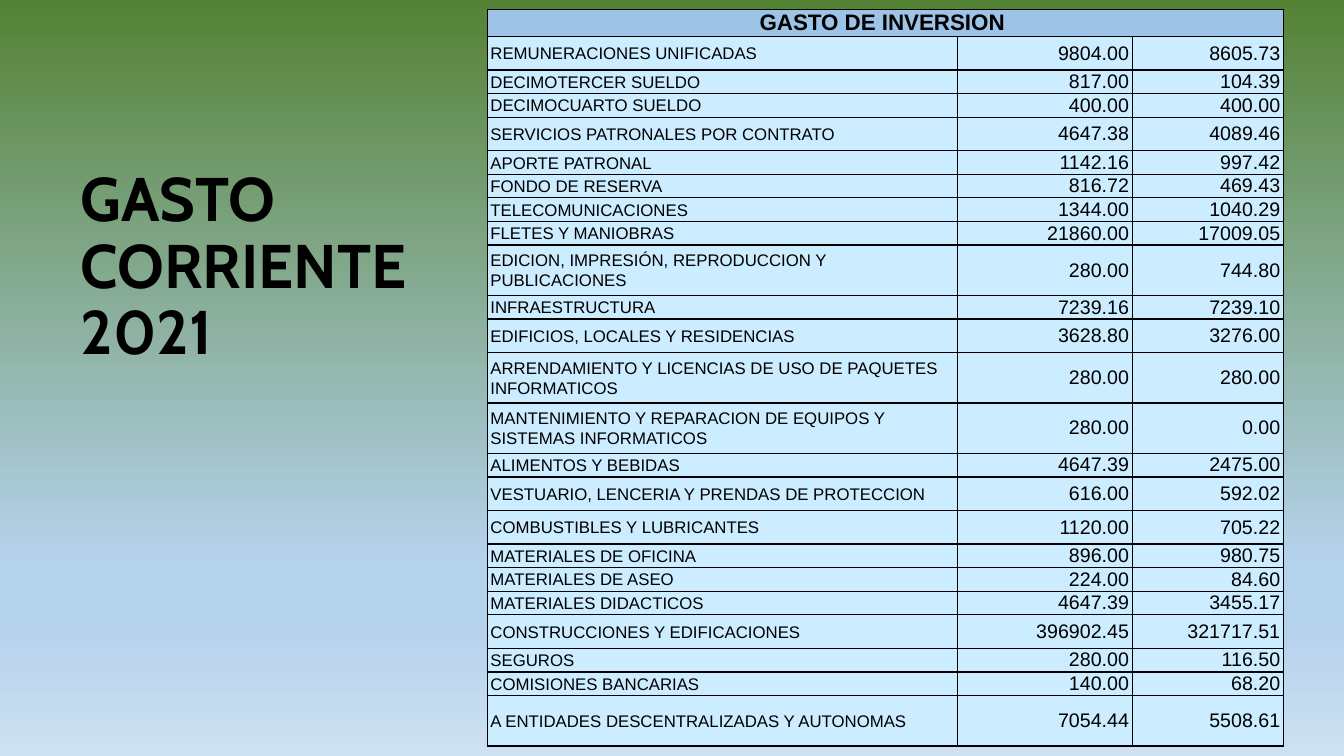
from lxml import etree
from pptx import Presentation
from pptx.dml.color import RGBColor
from pptx.enum import text
from pptx.oxml import ns
from pptx.util import Pt

BLACK = RGBColor(0x00, 0x00, 0x00)
HEADER_BLUE = RGBColor(0x9D, 0xC3, 0xE6)
CELL_BLUE = RGBColor(0xCC, 0xEC, 0xFF)
GREEN = RGBColor(0x54, 0x82, 0x35)
SKY = RGBColor(0xB5, 0xD2, 0xEC)
PALE_SKY = RGBColor(0xCE, 0xE1, 0xF2)
BACKGROUND_STOPS = [(0, GREEN), (74, SKY), (83, SKY), (100, PALE_SKY)]

COLUMN_WIDTHS = [336.2, 124.6, 108]
HEADER_HEIGHT, LOW, MEDIUM, HIGH = 18.8, 16.86, 24, 36
EXPENSES = [
    ("REMUNERACIONES UNIFICADAS", "9804.00", "8605.73", MEDIUM),
    ("DECIMOTERCER SUELDO", "817.00", "104.39", LOW),
    ("DECIMOCUARTO SUELDO", "400.00", "400.00", LOW),
    ("SERVICIOS PATRONALES POR CONTRATO", "4647.38", "4089.46", MEDIUM),
    ("APORTE PATRONAL", "1142.16", "997.42", LOW),
    ("FONDO DE RESERVA", "816.72", "469.43", LOW),
    ("TELECOMUNICACIONES", "1344.00", "1040.29", LOW),
    ("FLETES Y MANIOBRAS", "21860.00", "17009.05", LOW),
    ("EDICION, IMPRESIÓN, REPRODUCCION Y PUBLICACIONES", "280.00", "744.80", HIGH),
    ("INFRAESTRUCTURA", "7239.16", "7239.10", LOW),
    ("EDIFICIOS, LOCALES Y RESIDENCIAS", "3628.80", "3276.00", MEDIUM),
    ("ARRENDAMIENTO Y LICENCIAS DE USO DE PAQUETES INFORMATICOS", "280.00", "280.00", HIGH),
    ("MANTENIMIENTO Y REPARACION DE EQUIPOS Y SISTEMAS INFORMATICOS", "280.00", "0.00", HIGH),
    ("ALIMENTOS Y BEBIDAS", "4647.39", "2475.00", LOW),
    ("VESTUARIO, LENCERIA Y PRENDAS DE PROTECCION", "616.00", "592.02", MEDIUM),
    ("COMBUSTIBLES Y LUBRICANTES", "1120.00", "705.22", MEDIUM),
    ("MATERIALES DE OFICINA", "896.00", "980.75", LOW),
    ("MATERIALES DE ASEO", "224.00", "84.60", LOW),
    ("MATERIALES DIDACTICOS", "4647.39", "3455.17", LOW),
    ("CONSTRUCCIONES Y EDIFICACIONES", "396902.45", "321717.51", MEDIUM),
    ("SEGUROS", "280.00", "116.50", LOW),
    ("COMISIONES BANCARIAS", "140.00", "68.20", LOW),
    ("A ENTIDADES DESCENTRALIZADAS Y AUTONOMAS", "7054.44", "5508.61", HIGH),
]


def add_element(parent, tag, **attributes):
    return etree.SubElement(parent, ns.qn(tag), **attributes)


def paint_background(slide):
    slide.background.fill.gradient()
    gradient = slide.element.xpath(".//p:bgPr/a:gradFill")[0]
    for child in list(gradient):
        gradient.remove(child)
    stops = add_element(gradient, "a:gsLst")
    for percent, color in BACKGROUND_STOPS:
        stop = add_element(stops, "a:gs", pos=str(percent * 1000))
        add_element(stop, "a:srgbClr", val=str(color))
    add_element(gradient, "a:lin", ang="5400000", scaled="0")


def add_title(slide, left, top, width, height):
    shape = slide.shapes.add_textbox(Pt(left), Pt(top), Pt(width), Pt(height))
    frame = shape.text_frame
    frame.word_wrap = True
    frame.vertical_anchor = text.MSO_ANCHOR.MIDDLE
    frame.margin_left = frame.margin_right = Pt(7.2)
    frame.margin_top = frame.margin_bottom = Pt(7.2)
    paragraph = frame.paragraphs[0]
    paragraph.text = "GASTO CORRIENTE 2021"
    paragraph._p.get_or_add_pPr().set("marL", str(Pt(5)))
    paragraph.line_spacing = 0.9
    font = paragraph.font
    font.name, font.size, font.bold = "Cabin", Pt(44), True
    font.color.rgb = BLACK


def style_cell(cell, color):
    cell.margin_left = cell.margin_right = Pt(2.3)
    cell.margin_top = cell.margin_bottom = 0
    cell.vertical_anchor = text.MSO_ANCHOR.MIDDLE
    # Borders come before the fill in the cell properties
    properties = cell._tc.get_or_add_tcPr()
    for side in ("a:lnL", "a:lnR", "a:lnT", "a:lnB"):
        line = add_element(properties, side, w=str(Pt(1)))
        add_element(add_element(line, "a:solidFill"), "a:srgbClr", val=str(BLACK))
    cell.fill.solid()
    cell.fill.fore_color.rgb = color


def write_cell(cell, words, size, alignment, bold=False, line_spacing=1.0):
    paragraph = cell.text_frame.paragraphs[0]
    paragraph.text = words
    paragraph.alignment = alignment
    paragraph.line_spacing = line_spacing
    font = paragraph.font
    font.name, font.size, font.bold = "Arial", Pt(size), bold
    font.color.rgb = BLACK


def add_expense_table(slide, left, top):
    heights = [HEADER_HEIGHT] + [expense[-1] for expense in EXPENSES]
    table = slide.shapes.add_table(
        len(heights), len(COLUMN_WIDTHS), Pt(left), Pt(top),
        Pt(sum(COLUMN_WIDTHS)), Pt(sum(heights))).table
    table.first_row = table.horz_banding = False
    for column, width in zip(table.columns, COLUMN_WIDTHS):
        column.width = Pt(width)
    for row, height in zip(table.rows, heights):
        row.height = Pt(height)

    # Header across all columns
    for cell in table.rows[0].cells:
        style_cell(cell, HEADER_BLUE)
    table.cell(0, 0).merge(table.cell(0, len(COLUMN_WIDTHS) - 1))
    write_cell(table.cell(0, 0), "GASTO DE INVERSION ", 16, text.PP_ALIGN.CENTER, True)

    # One row per expense: name, then two amounts
    for row_index, (name, *amounts, _) in enumerate(EXPENSES, start=1):
        for column_index, words in enumerate([name, *amounts]):
            cell = table.cell(row_index, column_index)
            style_cell(cell, CELL_BLUE)
            if column_index == 0:
                write_cell(cell, words, 12, text.PP_ALIGN.LEFT, line_spacing=1.07)
            else:
                write_cell(cell, words, 14, text.PP_ALIGN.RIGHT)


def main():
    presentation = Presentation()
    presentation.slide_width, presentation.slide_height = Pt(960), Pt(540)
    slide = presentation.slides.add_slide(presentation.slide_layouts[6])
    paint_background(slide)
    add_title(slide, 45.4, 112.5, 265.7, 158.4)
    add_expense_table(slide, 348, 6.8)
    presentation.save("out.pptx")


if __name__ == "__main__":
    main()
